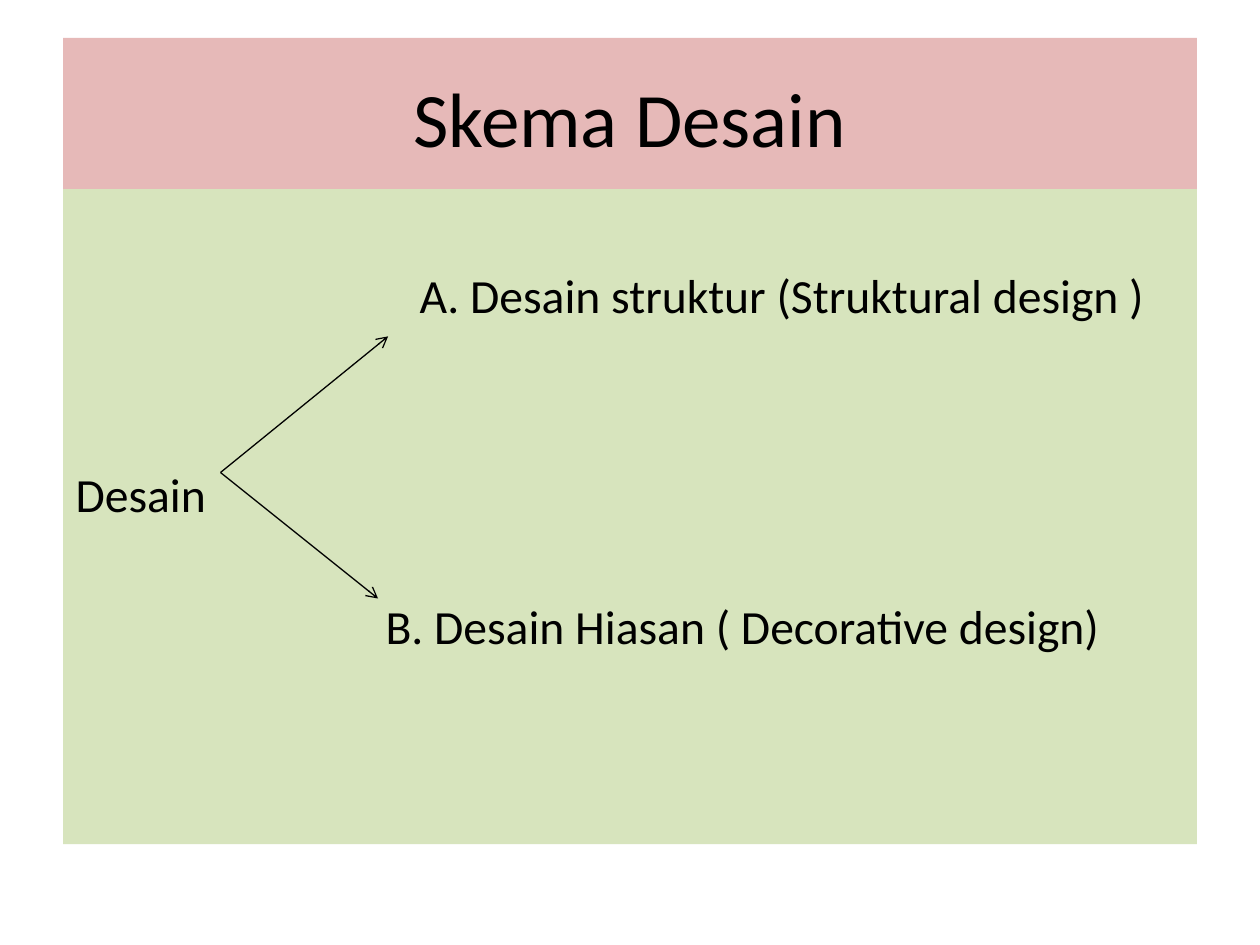
import dataclasses

import pptx
import pptx.dml.color
import pptx.enum.shapes
import pptx.enum.text
import pptx.oxml.ns
import pptx.util
from lxml import etree

Inches = pptx.util.Inches
Pt = pptx.util.Pt
RGB = pptx.dml.color.RGBColor
qn = pptx.oxml.ns.qn


@dataclasses.dataclass(frozen=True)
class Theme:
    font: str = "Calibri"
    ink: str = "000000"
    rose: str = "E6B9B8"
    green: str = "D7E4BD"
    head: float = 44
    text: float = 27.2
    line: float = 0.75


@dataclasses.dataclass(frozen=True)
class Box:
    left: float
    top: float
    width: float
    height: float


@dataclasses.dataclass(frozen=True)
class Item:
    text: str
    indent: float
    before: float


@dataclasses.dataclass(frozen=True)
class Arrow:
    x: float
    y: float


THEME = Theme()
ROOT = Arrow(1.75, 3.75)
TIPS = [Arrow(3.08, 2.67), Arrow(3, 4.75)]
ITEMS = [
    Item("A. Desain struktur (Struktural design )", 2.73, 0),
    Item("Desain", 0, 81),
    Item("B. Desain Hiasan ( Decorative design)", 2.46, 42.8),
]


def place(shape, box: Box, fill: str) -> None:
    shape.left, shape.top = Inches(box.left), Inches(box.top)
    shape.width, shape.height = Inches(box.width), Inches(box.height)
    shape.fill.solid()
    shape.fill.fore_color.rgb = RGB.from_string(fill)
    frame = shape.text_frame
    frame.word_wrap = True
    frame.auto_size = pptx.enum.text.MSO_AUTO_SIZE.NONE


def write(para, text: str, size: float) -> None:
    run = para.add_run()
    run.text = text
    run.font.name = THEME.font
    run.font.size = Pt(size)
    run.font.color.rgb = RGB.from_string(THEME.ink)


def fill_list(frame, items: list[Item]) -> None:
    for i, item in enumerate(items):
        para = frame.add_paragraph() if i else frame.paragraphs[0]
        para.space_before = Pt(item.before)
        props = para._p.get_or_add_pPr()
        props.set("marL", str(Inches(item.indent)))
        props.set("indent", "0")
        etree.SubElement(props, qn("a:buNone"))
        write(para, item.text, THEME.text)


def draw(slide, start: Arrow, end: Arrow) -> None:
    link = slide.shapes.add_connector(
        pptx.enum.shapes.MSO_CONNECTOR.STRAIGHT,
        Inches(start.x), Inches(start.y), Inches(end.x), Inches(end.y),
    )
    link.line.color.rgb = RGB.from_string(THEME.ink)
    link.line.width = Pt(THEME.line)
    etree.SubElement(link.line._get_or_add_ln(), qn("a:tailEnd"), type="arrow")
    etree.SubElement(link._element.spPr, qn("a:effectLst"))


def main() -> None:
    deck = pptx.Presentation()
    deck.slide_width, deck.slide_height = Inches(10), Inches(7.5)
    slide = deck.slides.add_slide(deck.slide_layouts[1])

    title = slide.shapes.title
    place(title, Box(0.5, 0.3, 9, 1.25), THEME.rose)
    title.text_frame.vertical_anchor = pptx.enum.text.MSO_ANCHOR.MIDDLE
    para = title.text_frame.paragraphs[0]
    para.alignment = pptx.enum.text.PP_ALIGN.CENTER
    write(para, "Skema Desain", THEME.head)

    body = slide.placeholders[1]
    place(body, Box(0.5, 1.5, 9, 5.2), THEME.green)
    body.text_frame.margin_top = Inches(0.61)
    fill_list(body.text_frame, ITEMS)

    for tip in TIPS:
        draw(slide, ROOT, tip)
    deck.save("out.pptx")


if __name__ == "__main__":
    main()
